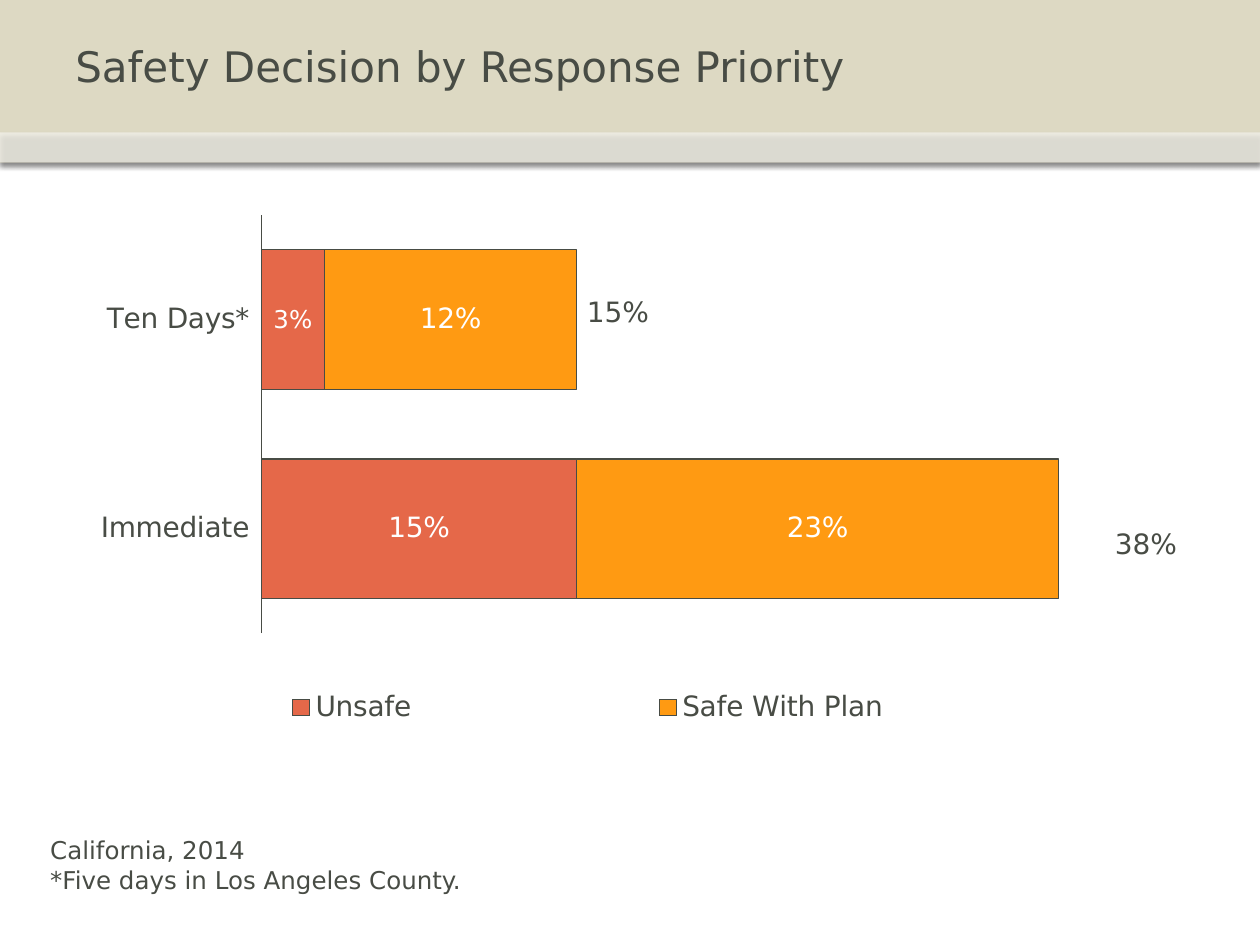
from lxml import etree
from pptx import Presentation
from pptx.chart.data import CategoryChartData
from pptx.dml.color import RGBColor
from pptx.enum.chart import (XL_CHART_TYPE, XL_LABEL_POSITION, XL_LEGEND_POSITION,
                             XL_TICK_LABEL_POSITION, XL_TICK_MARK)
from pptx.enum.shapes import MSO_SHAPE
from pptx.enum.text import MSO_ANCHOR
from pptx.oxml import parse_xml
from pptx.oxml.ns import nsdecls, qn
from pptx.util import Inches, Pt

FONT = "DejaVu Sans"
INK = RGBColor(0x48, 0x4C, 0x45)
WHITE = RGBColor(0xFF, 0xFF, 0xFF)
SAND = RGBColor(0xDD, 0xD9, 0xC3)
RED = RGBColor(0xE5, 0x68, 0x49)
ORANGE = RGBColor(0xFF, 0x9A, 0x12)

TITLE = "Safety Decision by Response Priority"
PRIORITIES = ["Immediate", "Ten Days*"]
DECISIONS = [("Unsafe", (0.15, 0.03), RED), ("Safe With Plan", (0.23, 0.12), ORANGE)]
NOTES = ["California, 2014", "*Five days in Los Angeles County."]
TOTALS = [("38%", (8.75, 4.13, 1.03, 0.37)), ("15%", (4.56, 2.29, 0.88, 0.37))]

WIDTH, HEIGHT = 10, 7.5
TITLE_HEIGHT, BAND_HEIGHT = 1.05, 0.24
CHART_BOX = (0.25, 1.58, 8.83, 4.34)
PLOT_LAYOUT = (0.207, 0.029, 0.754, 0.765)
LEGEND_LAYOUT = (0.02, 0.88, 0.96, 0.1)


def style_font(font, size, color=INK):
    font.name = FONT
    font.size = Pt(size)
    font.color.rgb = color


def add_banner(slide, box, color, opacity=100):
    shape = slide.shapes.add_shape(MSO_SHAPE.RECTANGLE, *map(Inches, box))
    shape.fill.solid()
    shape.fill.fore_color.rgb = color
    shape.line.fill.background()
    if opacity < 100:
        color_element = shape._element.spPr.find(qn("a:solidFill"))[0]
        etree.SubElement(color_element, qn("a:alpha"), val=str(opacity * 1000))
    shape._element.spPr.append(parse_xml(
        f'<a:effectLst {nsdecls("a")}>'
        f'<a:outerShdw blurRad="{Pt(3.1)}" dist="{Pt(1.8)}" dir="5400000" rotWithShape="0">'
        '<a:srgbClr val="000000"><a:alpha val="35000"/></a:srgbClr>'
        '</a:outerShdw></a:effectLst>'))


def add_text(slide, box, lines, size, anchor=MSO_ANCHOR.TOP):
    frame = slide.shapes.add_textbox(*map(Inches, box)).text_frame
    frame.word_wrap = True
    frame.vertical_anchor = anchor
    frame.text = "\n".join(lines)
    for paragraph in frame.paragraphs:
        style_font(paragraph.runs[0].font, size)


def layout_xml(shares, inner=False):
    """Manual chart layout from left, top, width and height shares."""
    target = '<c:layoutTarget val="inner"/>' if inner else ""
    sizes = "".join(f'<c:{name} val="{share}"/>' for name, share in zip("xywh", shares))
    return parse_xml(f'<c:layout {nsdecls("c")}><c:manualLayout>{target}'
                     '<c:xMode val="edge"/><c:yMode val="edge"/>'
                     f'{sizes}</c:manualLayout></c:layout>')


def add_decision_chart(slide):
    data = CategoryChartData(number_format="0%")
    data.categories = PRIORITIES
    for name, values, _ in DECISIONS:
        data.add_series(name, values)
    chart = slide.shapes.add_chart(
        XL_CHART_TYPE.BAR_STACKED, *map(Inches, CHART_BOX), data).chart
    style_font(chart.font, 16)
    chart.has_title = False

    category_axis = chart.category_axis
    category_axis.major_tick_mark = XL_TICK_MARK.NONE
    category_axis.tick_label_position = XL_TICK_LABEL_POSITION.LOW
    category_axis.format.line.color.rgb = INK
    category_axis.format.line.width = Pt(0.75)
    value_axis = chart.value_axis
    value_axis.minimum_scale, value_axis.maximum_scale = 0, 0.4
    value_axis.has_major_gridlines = False
    value_axis.visible = False

    plot = chart.plots[0]
    plot.gap_width, plot.overlap = 50, 100
    plot.vary_by_categories = False
    for series, (_, _, color) in zip(plot.series, DECISIONS):
        series.format.fill.solid()
        series.format.fill.fore_color.rgb = color
        series.format.line.color.rgb = INK
        series.format.line.width = Pt(0.75)
        labels = series.data_labels
        labels.show_value = True
        labels.number_format, labels.number_format_is_linked = "0%", False
        labels.position = XL_LABEL_POSITION.CENTER
        style_font(labels.font, 16, WHITE)

    narrow_label = plot.series[0].points[1].data_label
    narrow_label.text_frame.text = "3%"
    style_font(narrow_label.text_frame.paragraphs[0].runs[0].font, 14, WHITE)
    narrow_label.position = XL_LABEL_POSITION.CENTER

    chart.has_legend = True
    legend = chart.legend
    legend.position = XL_LEGEND_POSITION.BOTTOM
    legend.include_in_layout = False
    style_font(legend.font, 16)
    plot_area = chart._chartSpace.chart.plotArea
    for parent, new_layout in ((plot_area, layout_xml(PLOT_LAYOUT, inner=True)),
                               (legend._element, layout_xml(LEGEND_LAYOUT))):
        for old_layout in parent.findall(qn("c:layout")):
            parent.remove(old_layout)
        parent.insert(0 if parent is plot_area else 1, new_layout)


def main():
    presentation = Presentation()
    presentation.slide_width, presentation.slide_height = Inches(WIDTH), Inches(HEIGHT)
    slide = presentation.slides.add_slide(presentation.slide_layouts[6])
    add_banner(slide, (0, 0, WIDTH, TITLE_HEIGHT + BAND_HEIGHT), SAND)
    add_banner(slide, (0, TITLE_HEIGHT, WIDTH, BAND_HEIGHT), WHITE, opacity=53)
    add_text(slide, (0.5, 0, 9, TITLE_HEIGHT), [TITLE], 24, MSO_ANCHOR.MIDDLE)
    add_decision_chart(slide)
    add_text(slide, (0.3, 6.58, 4, 0.81), NOTES, 14)
    for total, box in TOTALS:
        add_text(slide, box, [total], 16)
    presentation.save("out.pptx")


if __name__ == "__main__":
    main()
